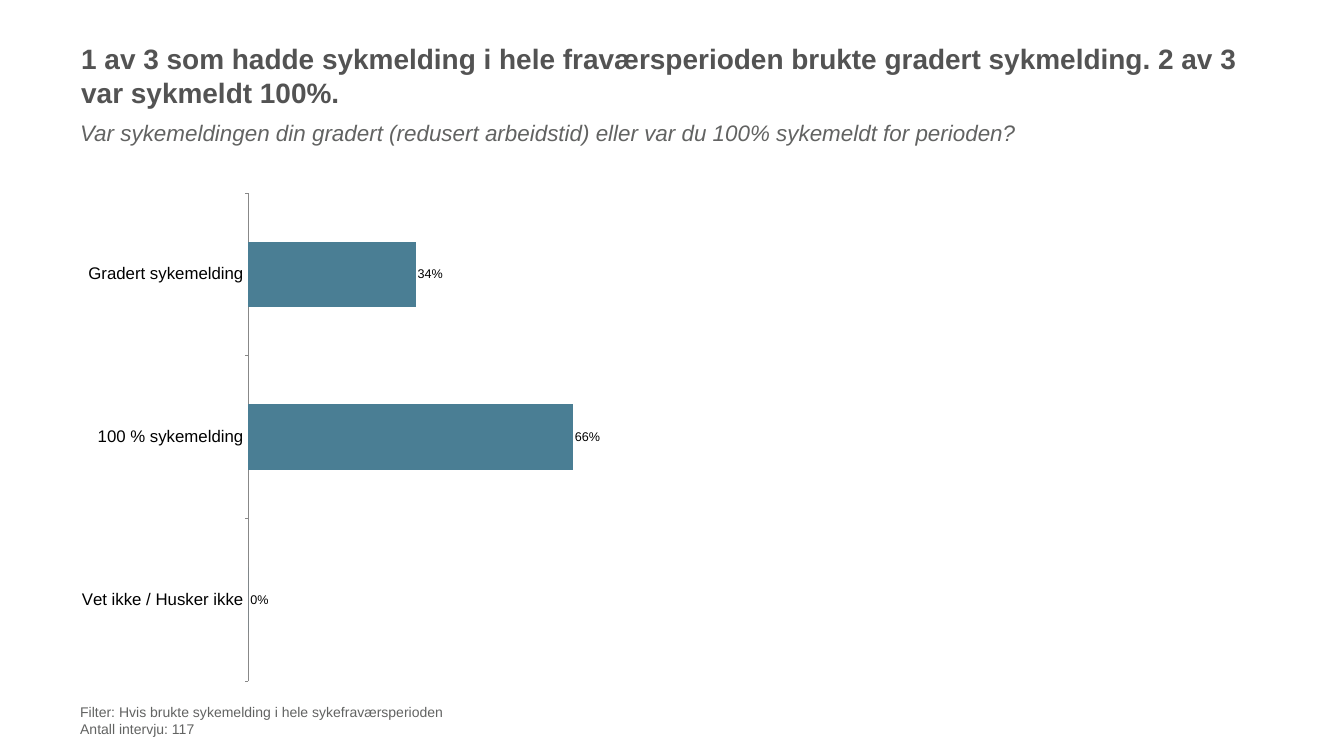
import pptx
import pptx.chart.data
import pptx.dml.color
import pptx.enum.chart
import pptx.enum.text
import pptx.util
from lxml import etree
from pptx.util import Cm, Pt

FONT = "Arial"
COLORS = {
    "title": "535353",
    "body": "626362",
    "bar": "4A7E94",
    "axis": "888888",
    "label": "000000",
}

LEFT = 3.89
TEXTS = [
    {
        "lines": ["1 av 3 som hadde sykmelding i hele fraværsperioden brukte "
                  "gradert sykmelding. 2 av 3 var sykmeldt 100%."],
        "box": (3.94, 2.24, 60.1, 3.1), "size": 40, "color": "title",
        "bold": True, "anchor": pptx.enum.text.MSO_ANCHOR.MIDDLE,
    },
    {
        "lines": ["Var sykemeldingen din gradert (redusert arbeidstid) "
                  "eller var du 100% sykemeldt for perioden?"],
        "box": (LEFT, 5.87, 60.1, 2.03), "size": 32, "color": "body",
        "italic": True,
    },
    {
        "lines": ["Filter: Hvis brukte sykemelding i hele sykefraværsperioden",
                  "Antall intervju: 117"],
        "box": (LEFT, 35.3, 59.3, 2.03), "size": 20, "color": "body",
    },
]
ANSWERS = {
    "Gradert sykemelding": 0.34,
    "100 % sykemelding": 0.66,
    "Vet ikke / Husker ikke": 0,
}
CHART_BOX = (LEFT, 8.41, 35.94, 26.19)
PLOT_AREA = {"x": 0.24, "y": 0.05, "w": 0.69, "h": 0.94}


def rgb(name):
    return pptx.dml.color.RGBColor.from_string(COLORS[name])


def style_font(font, size, color, bold=False, italic=False):
    font.name = FONT
    font.size = Pt(size)
    font.bold = bold
    font.italic = italic
    font.color.rgb = rgb(color)


def add_text(slide, lines, box, size, color, bold=False, italic=False,
             anchor=pptx.enum.text.MSO_ANCHOR.TOP):
    frame = slide.shapes.add_textbox(*map(Cm, box)).text_frame
    frame.word_wrap = True
    frame.vertical_anchor = anchor
    frame.margin_left = frame.margin_right = Cm(0.15)
    frame.margin_top = frame.margin_bottom = Cm(0.15)
    for index, line in enumerate(lines):
        paragraph = frame.add_paragraph() if index else frame.paragraphs[0]
        run = paragraph.add_run()
        run.text = line
        style_font(run.font, size, color, bold, italic)


def fix_plot_area(chart):
    """Pin the inner plot area to fractions of the chart's size."""
    ns = "{http://schemas.openxmlformats.org/drawingml/2006/chart}"
    plot_area = chart.element.find(f".//{ns}plotArea")
    for old in plot_area.findall(f"{ns}layout"):
        plot_area.remove(old)
    layout = etree.Element(f"{ns}layout")
    manual = etree.SubElement(layout, f"{ns}manualLayout")
    settings = {"layoutTarget": "inner", "xMode": "edge", "yMode": "edge",
                **PLOT_AREA}
    for tag, value in settings.items():
        etree.SubElement(manual, ns + tag, val=str(value))
    plot_area.insert(0, layout)


def add_answer_chart(slide):
    data = pptx.chart.data.CategoryChartData(number_format="0%")
    data.categories = list(ANSWERS)
    data.add_series("Series 1", list(ANSWERS.values()))
    chart = slide.shapes.add_chart(
        pptx.enum.chart.XL_CHART_TYPE.BAR_CLUSTERED,
        *map(Cm, CHART_BOX), data).chart
    chart.has_legend = False
    chart.has_title = False
    style_font(chart.font, 24, "label")

    answers = chart.category_axis
    answers.reverse_order = True
    answers.major_tick_mark = pptx.enum.chart.XL_TICK_MARK.OUTSIDE
    answers.format.line.color.rgb = rgb("axis")
    answers.format.line.width = Pt(0.75)
    style_font(answers.tick_labels.font, 24, "label")

    shares = chart.value_axis
    shares.minimum_scale = 0
    shares.maximum_scale = 1
    shares.has_major_gridlines = False
    shares.visible = False

    bars = chart.plots[0]
    bars.gap_width = 150
    bars.overlap = -20
    bars.vary_by_categories = False
    fill = bars.series[0].format.fill
    fill.solid()
    fill.fore_color.rgb = rgb("bar")

    labels = bars.series[0].data_labels
    labels.show_value = True
    labels.number_format = "0%"
    labels.number_format_is_linked = False
    labels.position = pptx.enum.chart.XL_LABEL_POSITION.OUTSIDE_END
    style_font(labels.font, 18, "label")
    fix_plot_area(chart)


def main():
    deck = pptx.Presentation()
    deck.slide_width = Cm(67.74)
    deck.slide_height = Cm(38.1)
    slide = deck.slides.add_slide(deck.slide_layouts[6])
    for text in TEXTS:
        add_text(slide, **text)
    add_answer_chart(slide)
    deck.save("out.pptx")


if __name__ == "__main__":
    main()
